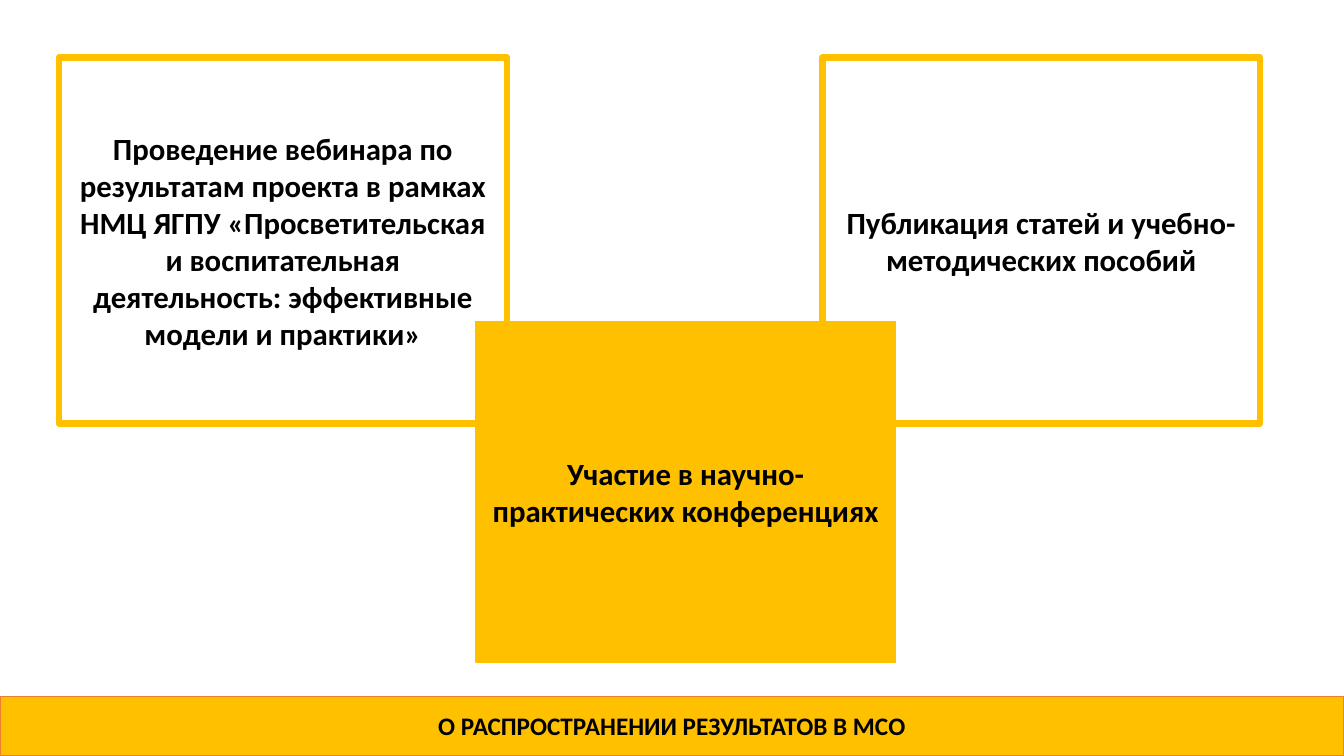
from pptx import Presentation
from pptx.dml.color import RGBColor
from pptx.enum.shapes import MSO_SHAPE
from pptx.enum.text import MSO_ANCHOR, MSO_AUTO_SIZE, PP_ALIGN
from pptx.util import Pt

AMBER = RGBColor(0xFF, 0xC0, 0x00)
ORANGE = RGBColor(0xED, 0x7D, 0x31)
WHITE = RGBColor(0xFF, 0xFF, 0xFF)
BLACK = RGBColor(0x00, 0x00, 0x00)

SLIDE_WIDTH, SLIDE_HEIGHT = 960, 540
BAR_TOP = 497.5
TITLE_TOP, TITLE_HEIGHT = 504, 29
CARD_TOP, CARD_HEIGHT = 41, 261.5


class SlideBuilder:
    font_format = {"name": "Calibri", "bold": True}
    frame_format = {"word_wrap": True, "vertical_anchor": MSO_ANCHOR.MIDDLE}

    def __init__(self, presentation):
        self.slide = presentation.slides.add_slide(presentation.slide_layouts[5])

    def apply(self, target, values):
        for name, value in values.items():
            setattr(target, name, value)

    def label(self, shape, text, size, auto_size=MSO_AUTO_SIZE.NONE):
        frame = shape.text_frame
        self.apply(frame, {**self.frame_format, "auto_size": auto_size})
        frame.text = text
        paragraph = frame.paragraphs[0]
        paragraph.alignment = PP_ALIGN.CENTER
        font = paragraph.runs[0].font
        self.apply(font, {**self.font_format, "size": Pt(size)})
        font.color.rgb = BLACK

    def rectangle(self, left, top, width, height, fill, line, line_width):
        box = [Pt(length) for length in (left, top, width, height)]
        shape = self.slide.shapes.add_shape(MSO_SHAPE.RECTANGLE, *box)
        shape.shadow.inherit = False
        shape.fill.solid()
        shape.fill.fore_color.rgb = fill
        shape.line.color.rgb = line
        shape.line.width = Pt(line_width)
        return shape

    def card(self, text, left, top, width, height, fill, line_width):
        shape = self.rectangle(left, top, width, height, fill, AMBER, line_width)
        self.label(shape, text, 22)

    def title_bar(self, text):
        self.rectangle(0, BAR_TOP, SLIDE_WIDTH, SLIDE_HEIGHT - BAR_TOP, AMBER, ORANGE, 1)
        title = self.slide.shapes.title
        self.apply(title, {"left": 0, "top": Pt(TITLE_TOP),
                           "width": Pt(SLIDE_WIDTH), "height": Pt(TITLE_HEIGHT)})
        self.label(title, text, 18, MSO_AUTO_SIZE.SHAPE_TO_FIT_TEXT)
        title.element.getparent().append(title.element)


def main():
    presentation = Presentation()
    presentation.slide_width = Pt(SLIDE_WIDTH)
    presentation.slide_height = Pt(SLIDE_HEIGHT)

    builder = SlideBuilder(presentation)
    builder.title_bar("О РАСПРОСТРАНЕНИИ РЕЗУЛЬТАТОВ В МСО")
    builder.card(
        "Проведение вебинара по результатам проекта в рамках НМЦ ЯГПУ "
        "«Просветительская и воспитательная деятельность: эффективные модели и практики»",
        42, CARD_TOP, 320, CARD_HEIGHT, WHITE, 4.5)
    builder.card("Публикация статей и учебно-методических пособий",
                 587.5, CARD_TOP, 312.5, CARD_HEIGHT, WHITE, 4.5)
    builder.card("Участие в научно-практических конференциях",
                 340, 229.5, 299.5, 243.5, AMBER, 1)

    presentation.save("out.pptx")


if __name__ == "__main__":
    main()
